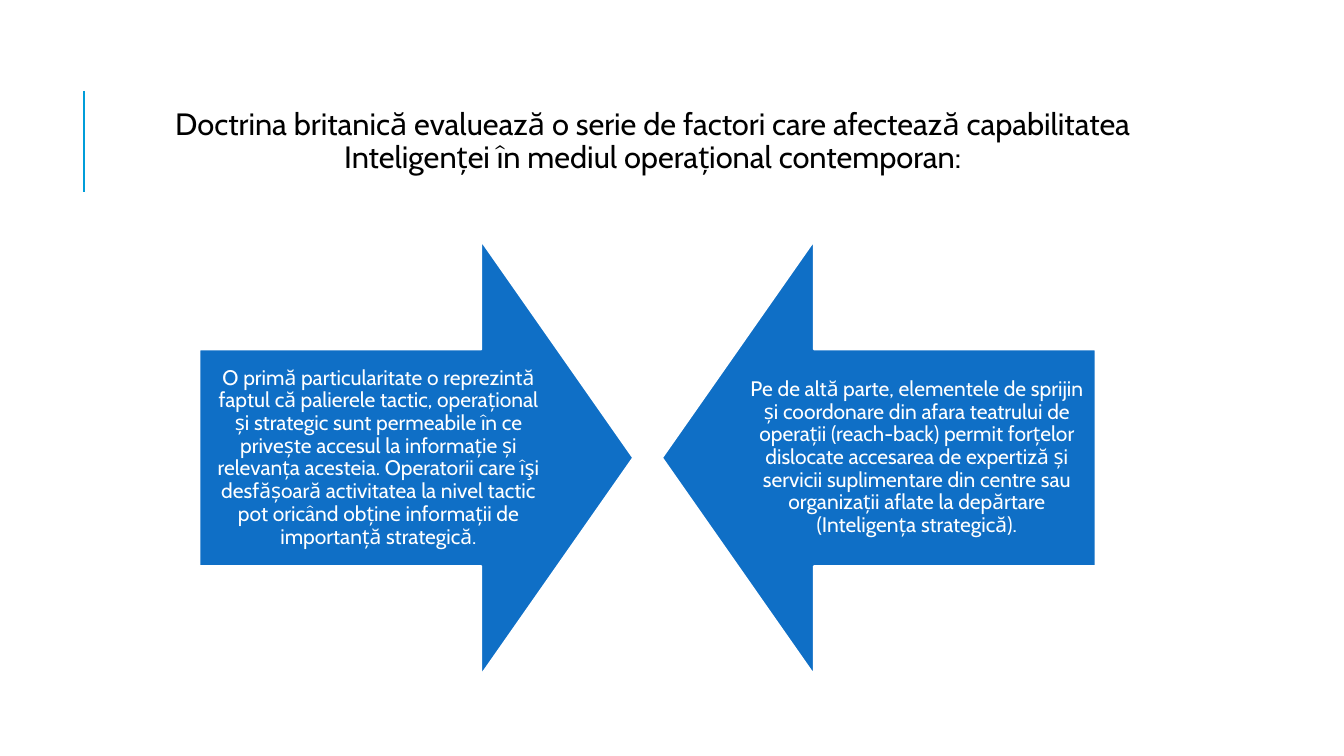
from pptx import Presentation
from pptx.dml.color import RGBColor
from pptx.enum.shapes import MSO_CONNECTOR, MSO_SHAPE
from pptx.enum.text import MSO_ANCHOR, PP_ALIGN
from pptx.oxml.ns import qn
from pptx.util import Pt
from lxml.etree import SubElement

BLACK = RGBColor(0x00, 0x00, 0x00)
WHITE = RGBColor(0xFF, 0xFF, 0xFF)
BLUE = RGBColor(0x0F, 0x6F, 0xC6)
CYAN = RGBColor(0x00, 0x9D, 0xD9)

TITLE = ("Doctrina britanică evaluează o serie de factori care afectează capabilitatea "
         "Inteligenței în mediul operațional contemporan:")
TACTICAL = ("O primă particularitate o reprezintă faptul că palierele tactic, operațional "
            "și strategic sunt permeabile în ce privește accesul la informație și relevanța "
            "acesteia. Operatorii care îşi desfășoară activitatea la nivel tactic pot oricând "
            "obține informații de importanță strategică.")
REACH_BACK = ("Pe de altă parte, elementele de sprijin și coordonare din afara teatrului de "
              "operații (reach-back) permit forțelor dislocate accesarea de expertiză și "
              "servicii suplimentare din centre sau organizații aflate la depărtare "
              "(Inteligența strategică).")


class SlideBuilder:
    font = "Cabin"

    def __init__(self, prs):
        self.s = prs.slides.add_slide(prs.slide_layouts[5])

    def set_text(self, sp, text, size, color, anchor, margins):
        tf = sp.text_frame
        tf.word_wrap = True
        tf.vertical_anchor = anchor
        tf.margin_left, tf.margin_top, tf.margin_right, tf.margin_bottom = map(Pt, margins)
        tf.text = text
        p = tf.paragraphs[0]
        p.alignment = PP_ALIGN.CENTER
        p.line_spacing = 0.9
        p.space_before = Pt(0)
        f = p.runs[0].font
        f.name, f.size, f.color.rgb = self.font, Pt(size), color

    def title(self, text, x, y, w, h):
        sp = self.s.shapes.title
        sp.left, sp.top, sp.width, sp.height = Pt(x), Pt(y), Pt(w), Pt(h)
        self.set_text(sp, text, 22, BLACK, MSO_ANCHOR.TOP, (10.8, 3.6, 3.6, 3.6))

    def text(self, text, x, y, w, h):
        sp = self.s.shapes.add_textbox(Pt(x), Pt(y), Pt(w), Pt(h))
        self.set_text(sp, text, 15, WHITE, MSO_ANCHOR.MIDDLE, (8.4,) * 4)

    def arrow(self, kind, x, y, size):
        sp = self.s.shapes.add_shape(kind, Pt(x), Pt(y), Pt(size), Pt(size))
        sp.adjustments[0], sp.adjustments[1] = 0.5, 0.35
        sp.shadow.inherit = False
        sp.fill.solid()
        sp.fill.fore_color.rgb = BLUE
        sp.line.color.rgb = WHITE
        sp.line.width = Pt(1.25)

    def rule(self, x, top, bottom):
        cn = self.s.shapes.add_connector(
            MSO_CONNECTOR.STRAIGHT, Pt(x), Pt(top), Pt(x), Pt(bottom))
        cn.line.color.rgb = CYAN
        cn.line.width = Pt(1.5)
        SubElement(cn._element.spPr, qn("a:effectLst"))


def main():
    prs = Presentation()
    prs.slide_width, prs.slide_height = Pt(960), Pt(540)
    b = SlideBuilder(prs)

    # Heading with its accent rule
    b.rule(60, 65, 137)
    b.title(TITLE, 80, 74.2, 765.4, 58.3)

    # Facing arrows; each text covers the shaft and half of the head
    size, top = 309.6, 172.2
    text_w = size * (1 - 0.35 / 2)
    for kind, x, inset, text in (
            (MSO_SHAPE.RIGHT_ARROW, 142.6, 0, TACTICAL),
            (MSO_SHAPE.LEFT_ARROW, 473, size - text_w, REACH_BACK)):
        b.arrow(kind, x, top, size)
        b.text(text, x + inset, top + size / 4, text_w, size / 2)

    prs.save("out.pptx")


if __name__ == "__main__":
    main()
